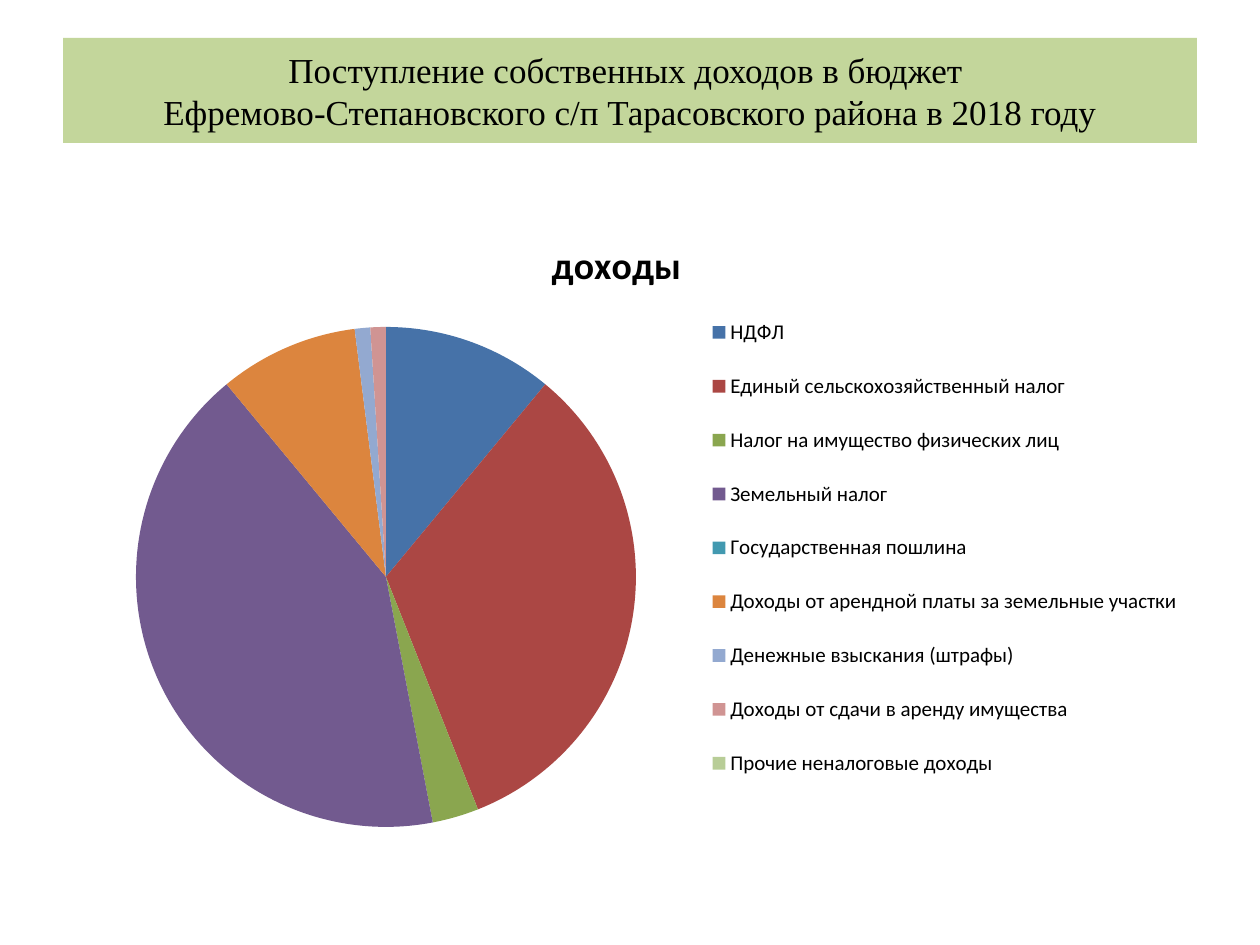
from lxml import etree
from pptx import Presentation
from pptx import util as u
from pptx.chart import data as chart_data
from pptx.dml import color
from pptx.enum import chart as chart_enum, text
from pptx.oxml import ns

SCALE = 914400 // 126
HEADING = "Поступление собственных доходов в бюджет \vЕфремово-Степановского с/п Тарасовского района в 2018 году"
INCOME = [
    ("НДФЛ", 11, "4672A8"),
    ("Единый сельскохозяйственный налог", 33, "AB4744"),
    ("Налог на имущество физических лиц", 3, "8AA64F"),
    ("Земельный налог", 42, "725A8F"),
    ("Государственная пошлина", 0, "4299B0"),
    ("Доходы от арендной платы за земельные участки", 9, "DC853E"),
    ("Денежные взыскания (штрафы)", 1, "93A9D0"),
    ("Доходы от сдачи в аренду имущества", 1, "D09493"),
    ("Прочие неналоговые доходы", 0, "B8CD97"),
]


def px(length):
    """Turn pixels into EMU."""
    return u.Emu(length * SCALE)


def rgb(value):
    """Turn a hex string into a colour."""
    return color.RGBColor.from_string(value)


def set_format(target, values):
    """Set attributes of an object from a dict."""
    for name, value in values.items():
        setattr(target, name, value)


def set_font(font, size, name, bold=False):
    """Give a font its size, face, weight and black colour."""
    set_format(font, {"size": u.Pt(size), "name": name, "bold": bold})
    font.color.rgb = rgb("000000")


def set_layout(element, index, chart_box, **lengths):
    """Place a chart part by pixel lengths relative to the chart box."""
    for old in element.findall(ns.qn("c:layout")):
        element.remove(old)
    layout = etree.Element(ns.qn("c:layout"))
    manual = etree.SubElement(layout, ns.qn("c:manualLayout"))
    if "plotArea" in element.tag:
        etree.SubElement(manual, ns.qn("c:layoutTarget"), val="inner")
    for axis in "xy":
        etree.SubElement(manual, ns.qn(f"c:{axis}Mode"), val="edge")
    whole = {"x": chart_box[2], "y": chart_box[3], "w": chart_box[2], "h": chart_box[3]}
    for name, length in lengths.items():
        etree.SubElement(manual, ns.qn(f"c:{name}"), val=f"{length / whole[name]:.4f}")
    element.insert(index, layout)


def place_title(slide, box):
    """Fill the title placeholder on its green band."""
    title = slide.shapes.title
    set_format(title, dict(zip(("left", "top", "width", "height"), map(px, box))))
    title.fill.solid()
    title.fill.fore_color.rgb = rgb("C3D69B")
    frame = title.text_frame
    frame.text = HEADING
    set_format(frame, {
        "word_wrap": True,
        "auto_size": text.MSO_AUTO_SIZE.NONE,
        "vertical_anchor": text.MSO_ANCHOR.MIDDLE,
    })
    paragraph = frame.paragraphs[0]
    paragraph.alignment = text.PP_ALIGN.CENTER
    for run in paragraph.runs:
        set_font(run.font, 20, "Times New Roman")


def place_income_chart(slide, box):
    """Draw the income pie with its title and legend."""
    data = chart_data.CategoryChartData()
    data.categories = [name for name, _, _ in INCOME]
    data.add_series("доходы", [share for _, share, _ in INCOME])
    chart = slide.shapes.add_chart(chart_enum.XL_CHART_TYPE.PIE, *map(px, box), data).chart
    set_font(chart.font, 18, "Calibri")
    set_format(chart, {"has_title": True, "has_legend": True})

    heading = chart.chart_title
    heading.text_frame.text = "доходы"
    set_font(heading.text_frame.paragraphs[0].runs[0].font, 21.6, "Calibri", True)
    set_layout(heading._element, 1, box, x=482, y=11)

    legend = chart.legend
    set_format(legend, {"position": chart_enum.XL_LEGEND_POSITION.RIGHT, "include_in_layout": False})
    set_font(legend.font, 12, "Calibri")
    set_layout(legend._element, 1, box, x=642, y=71, w=480, h=514)

    plot = chart.plots[0]
    plot.vary_by_categories = True
    for index, (_, _, fill_color) in enumerate(INCOME):
        fill = plot.series[0].points[index].format.fill
        fill.solid()
        fill.fore_color.rgb = rgb(fill_color)
    set_layout(chart._chartSpace.chart.plotArea, 0, box, x=73, y=107, w=500, h=500)


def main():
    """Build and save the presentation."""
    presentation = Presentation()
    set_format(presentation, {"slide_width": px(1260), "slide_height": px(945)})
    slide = presentation.slides.add_slide(presentation.slide_layouts[5])
    place_title(slide, (63, 38, 1134, 105))
    place_income_chart(slide, (63, 220, 1134, 624))
    presentation.save("out.pptx")


if __name__ == "__main__":
    main()
